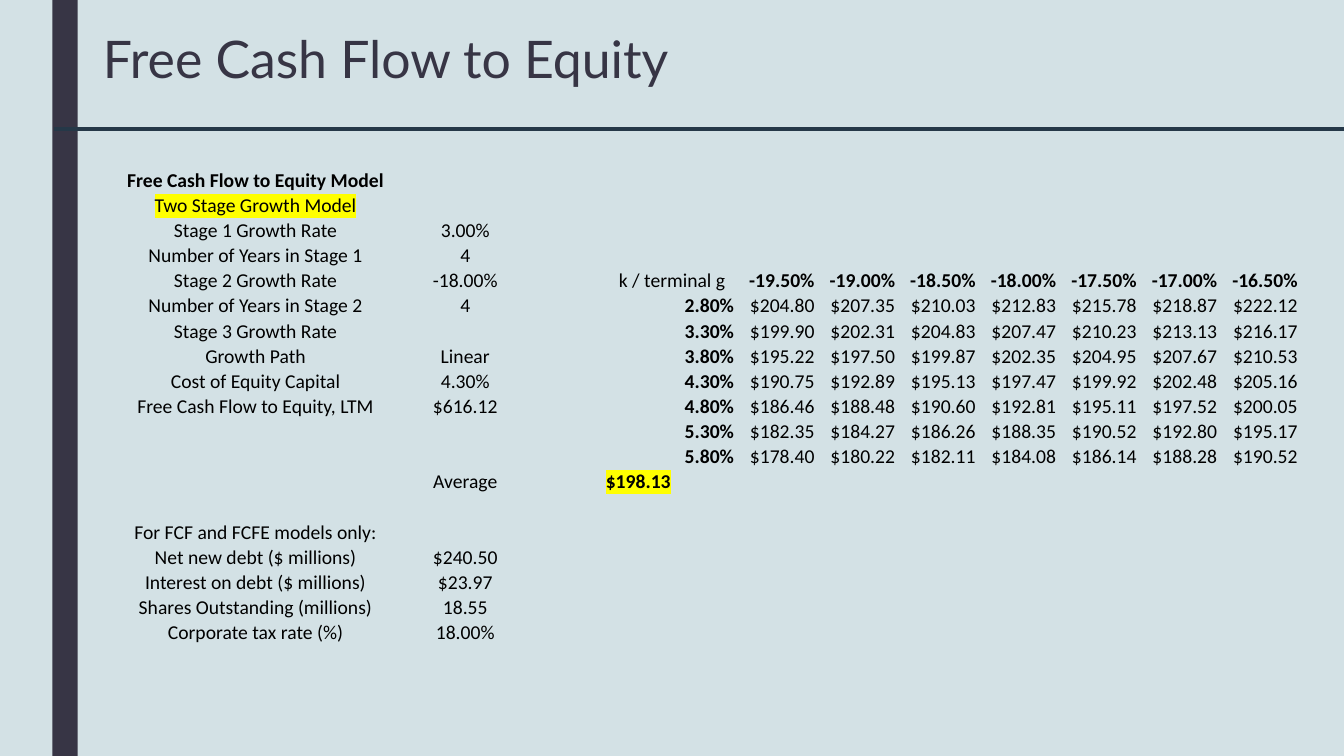
from dataclasses import dataclass

from lxml import etree
from pptx import Presentation
from pptx.dml.color import RGBColor
from pptx.enum.shapes import MSO_CONNECTOR, MSO_SHAPE
from pptx.enum.text import MSO_ANCHOR, MSO_AUTO_SIZE, PP_ALIGN
from pptx.oxml.ns import qn
from pptx.util import Cm, Pt

LINE = MSO_CONNECTOR.STRAIGHT
RECT = MSO_SHAPE.RECTANGLE
TOP, BOTTOM = MSO_ANCHOR.TOP, MSO_ANCHOR.BOTTOM
FIXED = MSO_AUTO_SIZE.NONE
LEFT, MID, RIGHT = PP_ALIGN.LEFT, PP_ALIGN.CENTER, PP_ALIGN.RIGHT
PLAIN = "{2D5ABB26-0587-4C30-8999-92F81FD0307C}"
WIDE, TALL = Cm(33.87), Cm(19.05)


@dataclass(frozen=True)
class Theme:
    back: str = "D3E1E5"
    dark: str = "373545"
    rule: str = "253848"
    ink: str = "000000"
    mark: str = "FFFF00"
    head: str = "Lato"
    body: str = "Calibri"
    big: int = 37
    small: int = 14


THEME = Theme()

INPUTS = [
    ("Free Cash Flow to Equity Model", ""),
    ("Two Stage Growth Model", ""),
    ("Stage 1 Growth Rate", "3.00%"),
    ("Number of Years in Stage 1", "4"),
    ("Stage 2 Growth Rate", "-18.00%"),
    ("Number of Years in Stage 2", "4"),
    ("Stage 3 Growth Rate", ""),
    ("Growth Path", "Linear"),
    ("Cost of Equity Capital", "4.30%"),
    ("Free Cash Flow to Equity, LTM", "$616.12"),
    ("", ""),
    ("", ""),
    ("", "Average"),
    ("", ""),
    ("For FCF and FCFE models only:", ""),
    ("Net new debt ($ millions)", "$240.50"),
    ("Interest on debt ($ millions)", "$23.97"),
    ("Shares Outstanding (millions)", "18.55"),
    ("Corporate tax rate (%)", "18.00%"),
]
PRICES = [
    (204.80, 207.35, 210.03, 212.83, 215.78, 218.87, 222.12),
    (199.90, 202.31, 204.83, 207.47, 210.23, 213.13, 216.17),
    (195.22, 197.50, 199.87, 202.35, 204.95, 207.67, 210.53),
    (190.75, 192.89, 195.13, 197.47, 199.92, 202.48, 205.16),
    (186.46, 188.48, 190.60, 192.81, 195.11, 197.52, 200.05),
    (182.35, 184.27, 186.26, 188.35, 190.52, 192.80, 195.17),
    (178.40, 180.22, 182.11, 184.08, 186.14, 188.28, 190.52),
]
GRID_ROW, GRID_COL = 4, 2
MEAN_ROW = 12
WIDTHS = [6.68, 3.89, 4.83] + [2.03] * 7


def style(font, face, size, tone, bold=False):
    font.name, font.size, font.bold = face, Pt(size), bold
    font.color.rgb = RGBColor.from_string(tone)


def add_title(slide, text):
    title = slide.shapes.title
    title.left, title.top = Cm(2.34), Cm(0.74)
    title.width, title.height = Cm(26.67), Cm(4.11)
    frame = title.text_frame
    frame.text = text
    frame.auto_size, frame.vertical_anchor = FIXED, TOP
    para = frame.paragraphs[0]
    para.alignment, para.line_spacing = LEFT, 0.89
    style(para.runs[0].font, THEME.head, THEME.big, THEME.dark)


def add_bar(slide):
    bar = slide.shapes.add_shape(RECT, Cm(1.32), 0, Cm(0.64), TALL)
    bar.shadow.inherit = False
    bar.fill.solid()
    bar.fill.fore_color.rgb = RGBColor.from_string(THEME.dark)
    bar.line.fill.background()


def add_rule(slide):
    y = Cm(3.25)
    rule = slide.shapes.add_connector(LINE, Cm(1.37), y, WIDE, y)
    rule.line.color.rgb = RGBColor.from_string(THEME.rule)
    rule.line.width = Pt(2.25)
    etree.SubElement(rule._element.spPr, qn("a:effectLst"))


def set_mark(run):
    fill = run._r.rPr.find(qn("a:solidFill"))
    mark = etree.Element(qn("a:highlight"))
    etree.SubElement(mark, qn("a:srgbClr"), val=THEME.mark)
    fill.addnext(mark)


def set_cell(cell, text, align=MID, bold=False, mark=False):
    cell.text_frame.text = text
    para = cell.text_frame.paragraphs[0]
    para.alignment = align
    for run in para.runs:
        style(run.font, THEME.body, THEME.small, THEME.ink, bold)
        if mark:
            set_mark(run)


def clear_cell(cell):
    cell.fill.background()
    cell.vertical_anchor = BOTTOM
    cell.margin_left = cell.margin_right = 0
    cell.margin_top = cell.margin_bottom = 0
    para = cell.text_frame.paragraphs[0]
    etree.SubElement(para._p, qn("a:endParaRPr"), sz=str(THEME.small * 100))


def add_sheet(slide):
    count, high = len(INPUTS), Cm(12.04)
    frame = slide.shapes.add_table(
        count, len(WIDTHS), Cm(3.1), Cm(4.22), Cm(sum(WIDTHS)), high)
    table = frame.table
    table.first_row = table.horz_banding = False
    table._tbl.tblPr.find(qn("a:tableStyleId")).text = PLAIN
    for col, width in zip(table.columns, WIDTHS):
        col.width = Cm(width)
    for row in table.rows:
        row.height = high // count
    for cell in table.iter_cells():
        clear_cell(cell)
    return table


def fill_inputs(table):
    for r, (label, value) in enumerate(INPUTS):
        if label:
            set_cell(table.cell(r, 0), label, bold=r == 0, mark=r == 1)
        if value:
            set_cell(table.cell(r, 1), value)


def fill_grid(table):
    corner = table.cell(GRID_ROW, GRID_COL)
    set_cell(corner, "k / terminal g", RIGHT)
    corner.margin_right = Cm(0.22)
    for i, prices in enumerate(PRICES):
        growth, cost = -19.5 + i / 2, 2.8 + i / 2
        step = i + 1
        set_cell(table.cell(GRID_ROW, GRID_COL + step),
                 f"{growth:.2f}%", RIGHT, True)
        set_cell(table.cell(GRID_ROW + step, GRID_COL),
                 f"{cost:.2f}%", RIGHT, True)
        for j, price in enumerate(prices, GRID_COL + 1):
            set_cell(table.cell(GRID_ROW + step, j), f"${price:.2f}", RIGHT)
    set_cell(table.cell(MEAN_ROW, GRID_COL), "$198.13", bold=True, mark=True)


def main():
    deck = Presentation()
    deck.slide_width, deck.slide_height = WIDE, TALL
    slide = deck.slides.add_slide(deck.slide_layouts.get_by_name("Title Only"))
    back = slide.background.fill
    back.solid()
    back.fore_color.rgb = RGBColor.from_string(THEME.back)
    add_bar(slide)
    add_title(slide, "Free Cash Flow to Equity")
    table = add_sheet(slide)
    fill_inputs(table)
    fill_grid(table)
    add_rule(slide)
    deck.save("out.pptx")


if __name__ == "__main__":
    main()
